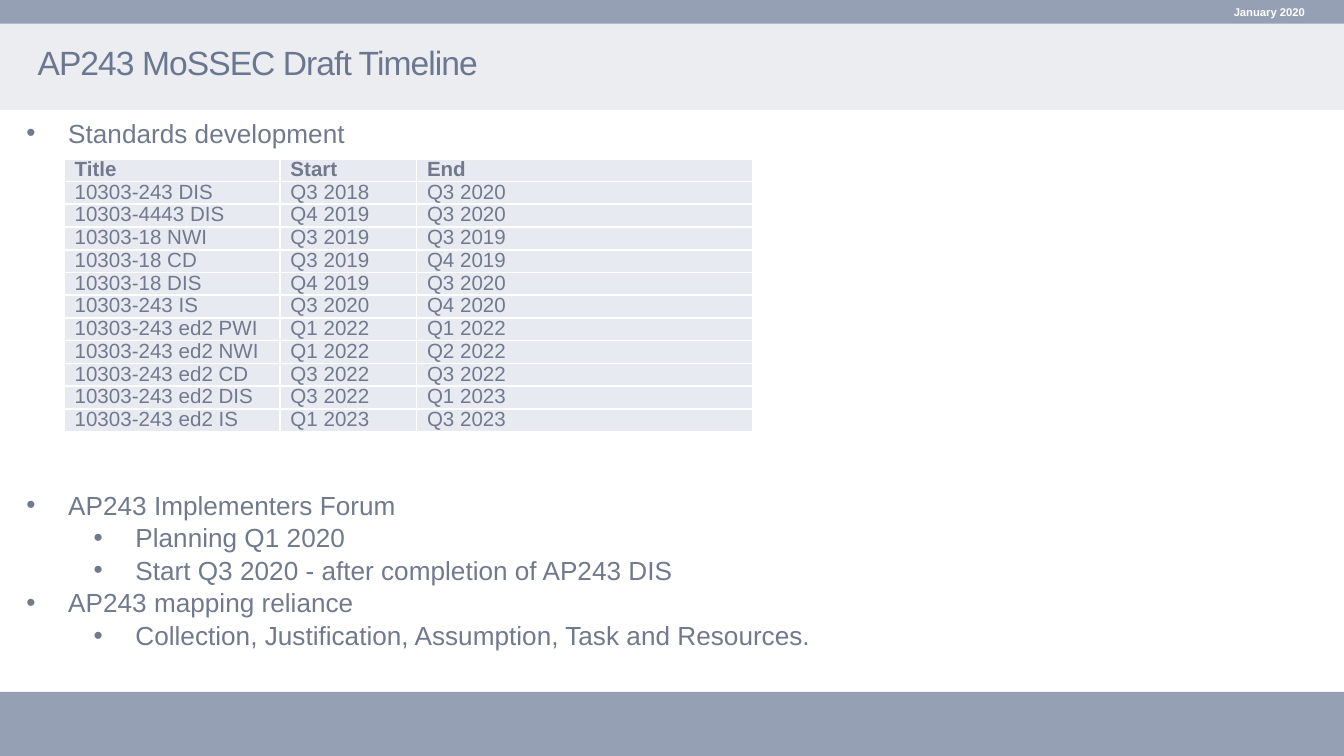
from dataclasses import dataclass

from lxml.etree import SubElement
from pptx import Presentation
from pptx.dml.color import RGBColor
from pptx.enum.shapes import MSO_SHAPE
from pptx.enum.text import MSO_ANCHOR, MSO_AUTO_SIZE, PP_ALIGN
from pptx.oxml.ns import qn
from pptx.util import Cm, Pt


@dataclass(frozen=True)
class Theme:
    font: str = "Arial"
    band: str = "96A0B4"
    header: str = "EBEDF0"
    title: str = "6B7791"
    text: str = "71798C"
    cell: str = "E7EAF1"
    white: str = "FFFFFF"
    title_size: float = 18
    body_size: float = 14
    table_size: float = 11
    date_size: float = 6


class SlideBuilder:
    def __init__(self, page, theme):
        self.page = page
        self.theme = theme

    def style(self, font, size, color, bold=False):
        values = {"name": self.theme.font, "size": Pt(size), "bold": bold}
        for name, value in values.items():
            setattr(font, name, value)
        font.color.rgb = RGBColor.from_string(color)

    def set_frame(self, frame, margins=(0, 0, 0, 0), anchor=MSO_ANCHOR.MIDDLE):
        sides = ("margin_left", "margin_top", "margin_right", "margin_bottom")
        values = dict(zip(sides, (Cm(margin) for margin in margins)))
        values |= {"word_wrap": True, "vertical_anchor": anchor,
                   "auto_size": MSO_AUTO_SIZE.NONE}
        for name, value in values.items():
            setattr(frame, name, value)

    def band(self, top, height, color):
        """Full-width band, placed behind the title."""
        shape = self.page.shapes.add_shape(
            MSO_SHAPE.RECTANGLE, 0, Cm(top), Cm(25.4), Cm(height))
        shape.shadow.inherit = False
        shape.fill.solid()
        shape.fill.fore_color.rgb = RGBColor.from_string(color)
        shape.line.fill.background()
        self.page.shapes.title.element.addprevious(shape.element)

    def title(self, text, left, top, width, height):
        box = self.page.shapes.title
        places = {"left": left, "top": top, "width": width, "height": height}
        for name, value in places.items():
            setattr(box, name, Cm(value))
        self.set_frame(box.text_frame)
        para = box.text_frame.paragraphs[0]
        para.alignment = PP_ALIGN.LEFT
        para.line_spacing = 0.8
        span = para.add_run()
        span.text = text
        self.style(span.font, self.theme.title_size, self.theme.title)
        span.font._element.set("spc", "-50")

    def date(self, text, left, top, width, height):
        box = self.page.shapes.add_textbox(Cm(left), Cm(top), Cm(width), Cm(height))
        self.set_frame(box.text_frame)
        para = box.text_frame.paragraphs[0]
        para.alignment = PP_ALIGN.RIGHT
        span = para.add_run()
        span.text = text
        self.style(span.font, self.theme.date_size, self.theme.white, bold=True)

    def bullets(self, items, left, top, width, height):
        """Bulleted list from (level, text) pairs."""
        box = self.page.shapes.add_textbox(Cm(left), Cm(top), Cm(width), Cm(height))
        frame = box.text_frame
        self.set_frame(frame, (0.25, 0.13, 0.25, 0.13), MSO_ANCHOR.TOP)
        for index, (level, text) in enumerate(items):
            para = frame.add_paragraph() if index else frame.paragraphs[0]
            para.level = level
            para.line_spacing = 1.04
            properties = para._p.get_or_add_pPr()
            properties.set("marL", str(Cm(0.79 + 1.27 * level)))
            properties.set("indent", str(Cm(-0.79)))
            SubElement(properties, qn("a:buFont"), typeface=self.theme.font)
            SubElement(properties, qn("a:buChar"), char="•")
            span = para.add_run()
            span.text = text
            self.style(span.font, self.theme.body_size, self.theme.text)

    def cell_borders(self, cell):
        properties = cell._tc.get_or_add_tcPr()
        for side in ("lnL", "lnR", "lnT", "lnB"):
            line = SubElement(properties, qn(f"a:{side}"), w=str(Pt(1)))
            fill = SubElement(line, qn("a:solidFill"))
            SubElement(fill, qn("a:srgbClr"), val=self.theme.white)

    def table(self, rows, left, top, widths, row_height):
        grid = self.page.shapes.add_table(
            len(rows), len(widths), Cm(left), Cm(top),
            Cm(sum(widths)), Cm(row_height * len(rows))).table
        grid.horz_banding = False
        for column, width in zip(grid.columns, widths):
            column.width = Cm(width)
        for row_index, row in enumerate(rows):
            grid.rows[row_index].height = Cm(row_height)
            for column_index, text in enumerate(row):
                cell = grid.cell(row_index, column_index)
                cell.margin_left = cell.margin_right = Cm(0.2)
                cell.margin_top = cell.margin_bottom = 0
                self.cell_borders(cell)
                cell.fill.solid()
                cell.fill.fore_color.rgb = RGBColor.from_string(self.theme.cell)
                para = cell.text_frame.paragraphs[0]
                para.line_spacing = 0.97
                span = para.add_run()
                span.text = text
                self.style(span.font, self.theme.table_size, self.theme.text,
                           bold=row_index == 0)


TIMELINE = [
    ("Title", "Start", "End"),
    ("10303-243 DIS", "Q3 2018", "Q3 2020"),
    ("10303-4443 DIS", "Q4 2019", "Q3 2020"),
    ("10303-18 NWI", "Q3 2019", "Q3 2019"),
    ("10303-18 CD", "Q3 2019", "Q4 2019"),
    ("10303-18 DIS", "Q4 2019", "Q3 2020"),
    ("10303-243 IS", "Q3 2020", "Q4 2020"),
    ("10303-243 ed2 PWI", "Q1 2022", "Q1 2022"),
    ("10303-243 ed2 NWI", "Q1 2022", "Q2 2022"),
    ("10303-243 ed2 CD", "Q3 2022", "Q3 2022"),
    ("10303-243 ed2 DIS", "Q3 2022", "Q1 2023"),
    ("10303-243 ed2 IS", "Q1 2023", "Q3 2023"),
]
NEXT_STEPS = [
    (0, "AP243 Implementers Forum"),
    (1, "Planning Q1 2020"),
    (1, "Start Q3 2020 - after completion of AP243 DIS"),
    (0, "AP243 mapping reliance"),
    (1, "Collection, Justification, Assumption, Task and Resources."),
]


def main():
    deck = Presentation()
    deck.slide_width, deck.slide_height = Cm(25.4), Cm(14.29)
    theme = Theme()
    builder = SlideBuilder(deck.slides.add_slide(deck.slide_layouts[5]), theme)

    # Header and footer bands
    builder.band(0.44, 1.64, theme.header)
    builder.band(13.08, 1.21, theme.band)
    builder.band(0, 0.45, theme.band)

    # Title and date
    builder.title("AP243 MoSSEC Draft Timeline", 0.71, 0.61, 24, 1.27)
    builder.date("January 2020", 21.26, 0, 3.4, 0.45)

    # Standards timeline
    builder.table(TIMELINE, 1.21, 3, (4.08, 2.58, 6.35), 0.43)
    builder.bullets([(0, "Standards development")], 0.25, 2.06, 19.38, 2.31)

    # Forum and mapping
    builder.bullets(NEXT_STEPS, 0.25, 9.09, 20.4, 3.84)

    deck.save("out.pptx")


if __name__ == "__main__":
    main()
